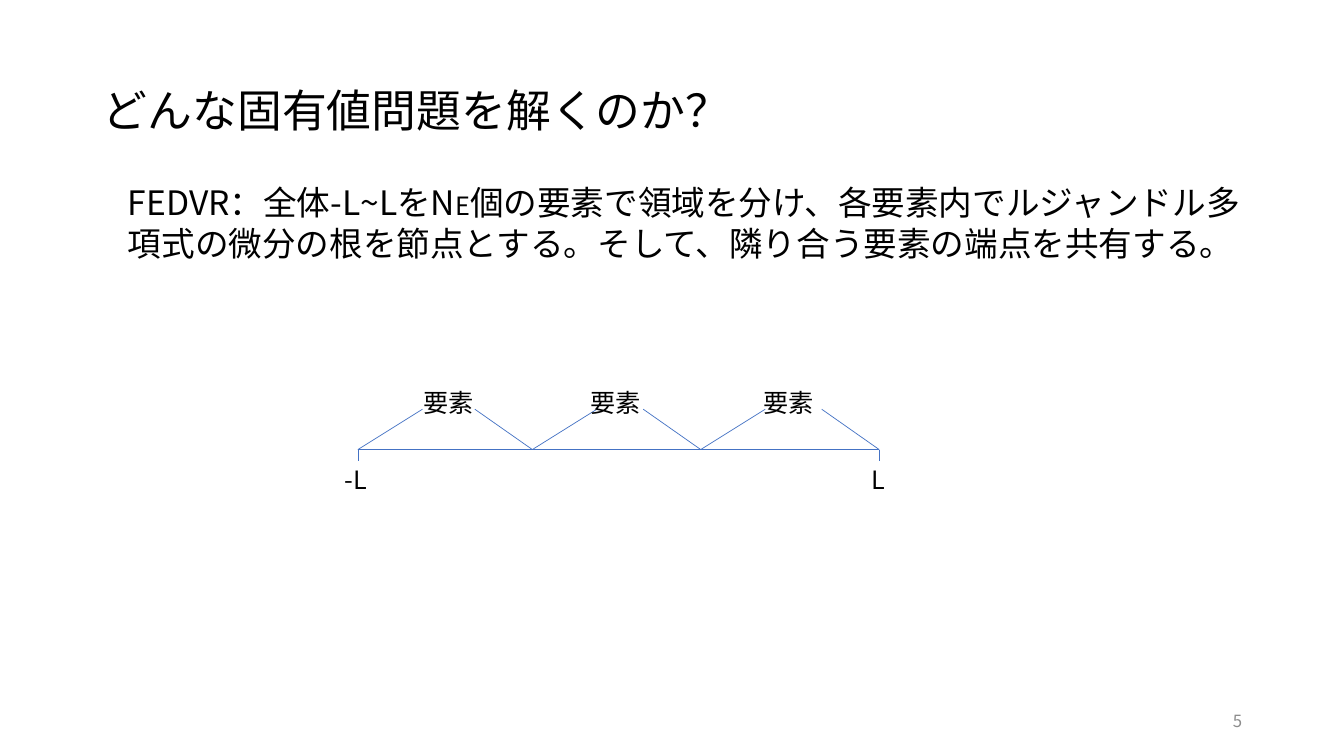
"""Build a slide on splitting the range -L to L into elements."""
from lxml import etree
from pptx import Presentation
from pptx.dml.color import RGBColor
from pptx.enum.shapes import MSO_CONNECTOR
from pptx.enum.text import MSO_ANCHOR, MSO_AUTO_SIZE, PP_ALIGN
from pptx.oxml.ns import qn
from pptx.util import Inches, Pt

LINE = MSO_CONNECTOR.STRAIGHT
MID, TOP = MSO_ANCHOR.MIDDLE, MSO_ANCHOR.TOP
LEFT, RIGHT = PP_ALIGN.LEFT, PP_ALIGN.RIGHT
FIXED = MSO_AUTO_SIZE.NONE

THEME = {
    "font": "Noto Sans CJK JP",
    "ink": RGBColor(0x00, 0x00, 0x00),
    "gray": RGBColor(0x8C, 0x8C, 0x8C),
    "blue": RGBColor(0x44, 0x72, 0xC4),
    "title": 32, "body": 24, "label": 18, "page": 12,
    "thick": 1, "thin": 0.5,
}

deck = Presentation()
deck.slide_width, deck.slide_height = Inches(13.33), Inches(7.5)
slide = deck.slides.add_slide(deck.slide_layouts[5])


def write(text, box, size="label", color="ink", align=LEFT, anchor=TOP,
          wrap=False, space=1.0, shape=None):
    """Put text, or a list of (text, size) runs, in a box."""
    place = [Inches(n) for n in box]
    shape = shape or slide.shapes.add_textbox(*place)
    shape.left, shape.top, shape.width, shape.height = place
    frame = shape.text_frame
    frame.auto_size, frame.word_wrap = FIXED, wrap
    frame.vertical_anchor = anchor
    para = frame.paragraphs[0]
    para.alignment, para.line_spacing = align, space
    runs = [(text, size)] if isinstance(text, str) else text
    for words, key in runs:
        run = para.add_run()
        run.text = words
        font = run.font
        font.name, font.size = THEME["font"], Pt(THEME[key])
        font.color.rgb = THEME[color]
        east = etree.SubElement(run._r.get_or_add_rPr(), qn("a:ea"))
        east.set("typeface", THEME["font"])


def draw(x1, y1, x2, y2, width="thin"):
    """Draw a straight blue line."""
    ends = [Inches(n) for n in (x1, y1, x2, y2)]
    line = slide.shapes.add_connector(LINE, *ends)
    line.line.color.rgb = THEME["blue"]
    line.line.width = Pt(THEME[width])
    etree.SubElement(line._element.spPr, qn("a:effectLst"))


write("どんな固有値問題を解くのか？", (0.92, 0.4, 11.5, 1.45), size="title",
      anchor=MID, wrap=True, space=0.9, shape=slide.shapes.title)
write("5", (9.42, 6.95, 3, 0.4), size="page", color="gray", align=RIGHT,
      anchor=MID, wrap=True)
write([("FEDVR：全体-L~LをN", "body"), ("E", "label"),
       ("個の要素で領域を分け、各要素内でルジャンドル多項式の微分の根を節点とする。"
        "そして、隣り合う要素の端点を共有する。", "body")],
      (1.17, 1.76, 11.55, 0.91), wrap=True)

nodes = [3.55, 5.28, 6.95, 8.72]
base, peak = 4.46, 4.06
draw(nodes[0], base, nodes[-1], base, width="thick")
for start, end, left in zip(nodes, nodes[1:], (4.1, 5.76, 7.47)):
    draw(start, base, start + 0.64, peak)
    draw(end, base, end - 0.57, peak)
    write("要素", (left, 3.79, 0.71, 0.4))

for node, name, left, width in ((nodes[0], "-L", 3.32, 0.46),
                                (nodes[-1], "L", 8.55, 0.35)):
    draw(node, base, node, base + 0.11)
    write(name, (left, 4.56, width, 0.4))

deck.save("out.pptx")
